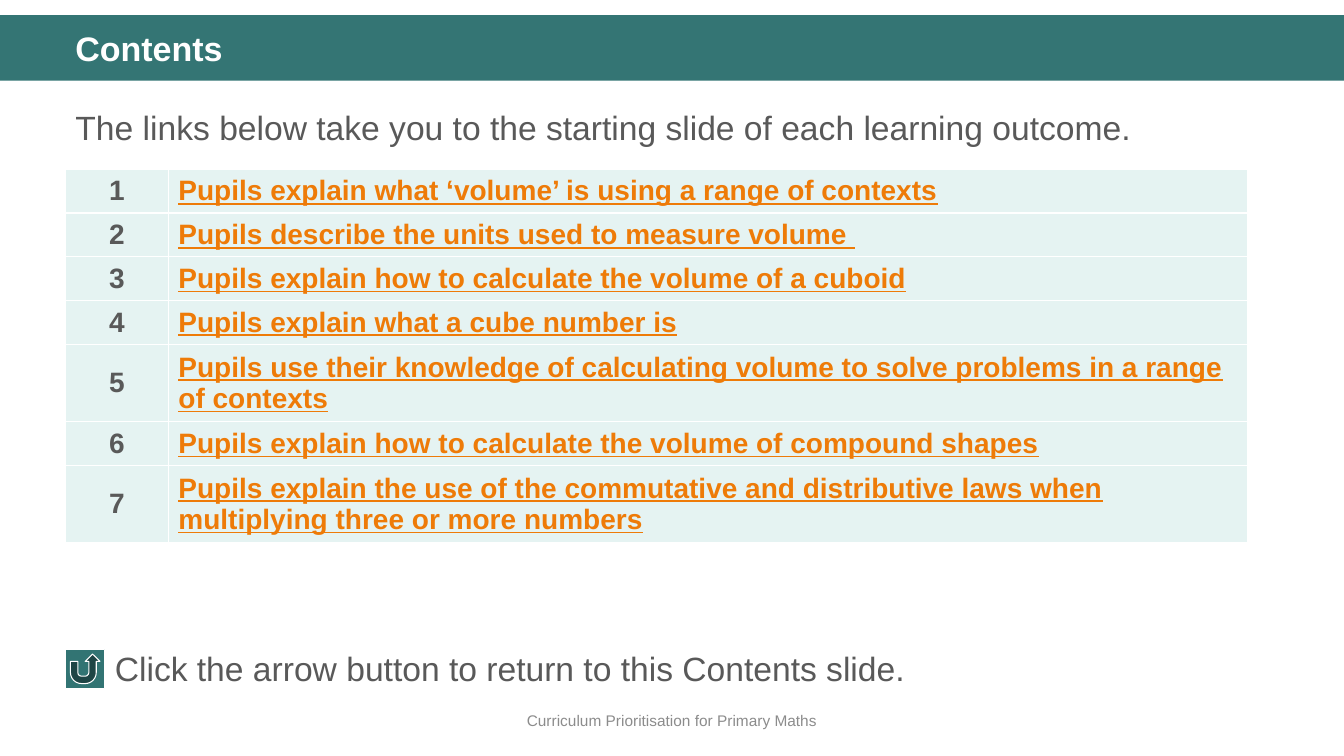
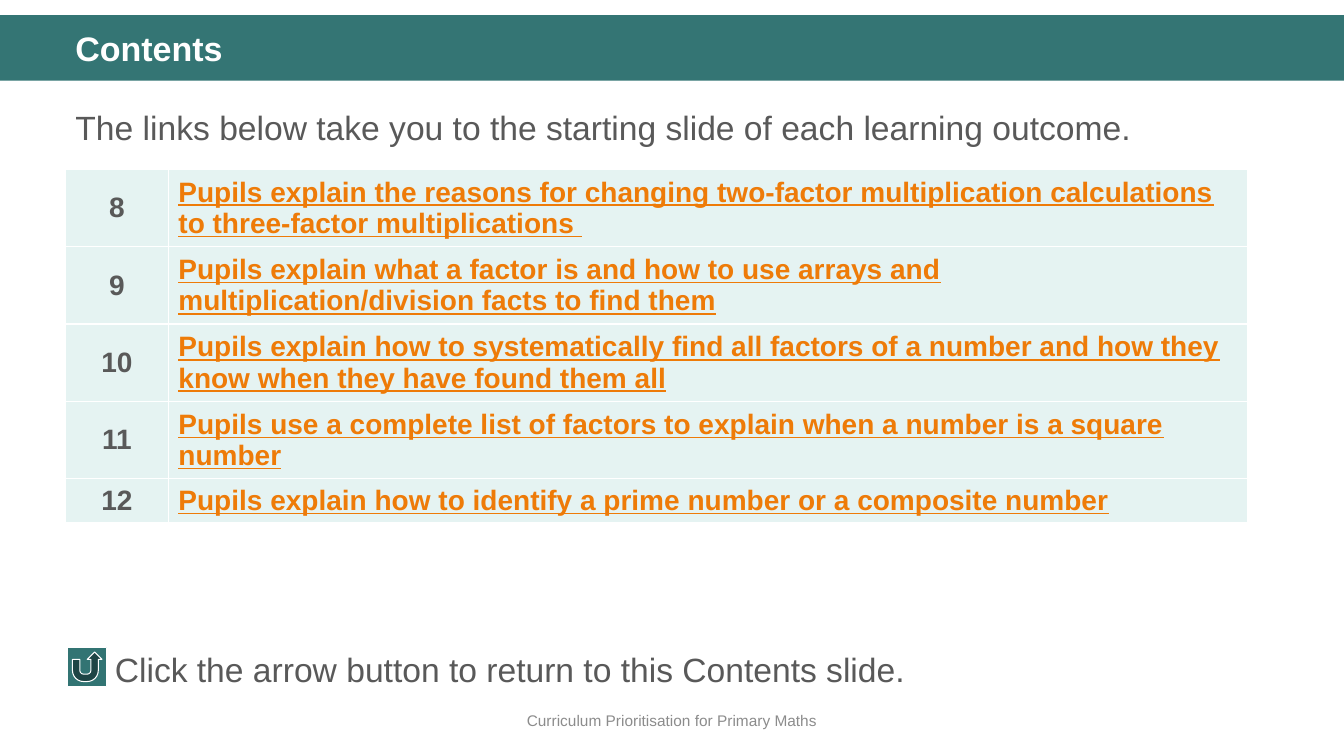
from lxml import etree
from pptx import Presentation
from pptx.dml.color import RGBColor
from pptx.enum.shapes import MSO_SHAPE as Shape
from pptx.enum.text import MSO_ANCHOR as Anchor, PP_ALIGN as Align
from pptx.oxml.ns import qn
from pptx.util import Inches, Pt

COLOURS = {
    "band": "347574",
    "button": "327473",
    "cell": "E5F3F2",
    "link": "EE7B08",
    "text": "595959",
    "footer": "8C8C8C",
    "white": "FFFFFF",
}
FONT = "Arial"
WIDTH, HEIGHT = 13.33, 7.5
MARGIN = 0.65
TEXT_WIDTH = 12.18
COLUMN_WIDTHS = (1.02, 10.7)
ROW_HEIGHT = 0.41
BUTTON_SIZE = 0.39

# Each slide: first number, outcomes, button corner, top of the button caption
CONTENTS = [
    (1, [
        "Pupils explain what ‘volume’ is using a range of contexts",
        "Pupils describe the units used to measure volume ",
        "Pupils explain how to calculate the volume of a cuboid",
        "Pupils explain what a cube number is",
        "Pupils use their knowledge of calculating volume to solve problems in a range of contexts",
        "Pupils explain how to calculate the volume of compound shapes",
        "Pupils explain the use of the commutative and distributive laws when "
        "multiplying three or more numbers",
    ], (0.65, 6.44), 6.38),
    (8, [
        "Pupils explain the reasons for changing two-factor multiplication calculations "
        "to three-factor multiplications ",
        "Pupils explain what a factor is and how to use arrays and "
        "multiplication/division facts to find them",
        "Pupils explain how to systematically find all factors of a number and how they "
        "know when they have found them all",
        "Pupils use a complete list of factors to explain when a number is a square number",
        "Pupils explain how to identify a prime number or a composite number",
    ], (0.67, 6.42), 6.39),
]


def colour(name):
    return RGBColor.from_string(COLOURS[name])


class ContentsDeck:
    """Holds the shared style and the slide being built."""

    def __init__(self):
        self.presentation = Presentation()
        self.presentation.slide_width = Inches(WIDTH)
        self.presentation.slide_height = Inches(HEIGHT)
        self.slide = None

    def start_slide(self, title):
        """Add a slide with the title band and the footer."""
        blank = self.presentation.slide_layouts[6]
        self.slide = self.presentation.slides.add_slide(blank)
        self.shape(Shape.RECTANGLE, 0, 0.15, WIDTH, 0.65, "band")
        self.text(title, MARGIN, 0.27, TEXT_WIDTH, 0.47, 24.3, "white",
                  bold=True, spacing=0.9)
        self.text("Curriculum Prioritisation for Primary Maths", 0, 6.95, WIDTH, 0.4,
                  11, "footer", align=Align.CENTER, anchor=Anchor.MIDDLE)

    def shape(self, kind, left, top, width, height, fill, line=None):
        shape = self.slide.shapes.add_shape(
            kind, Inches(left), Inches(top), Inches(width), Inches(height))
        shape.shadow.inherit = False
        shape.fill.solid()
        shape.fill.fore_color.rgb = colour(fill)
        if line:
            shape.line.color.rgb = colour(line)
            shape.line.width = Pt(0.75)
        else:
            shape.line.fill.background()

    def text(self, words, left, top, width, height, size, ink, bold=False,
             align=Align.LEFT, anchor=Anchor.TOP, spacing=1.0):
        box = self.slide.shapes.add_textbox(
            Inches(left), Inches(top), Inches(width), Inches(height))
        frame = box.text_frame
        frame.word_wrap = True
        frame.vertical_anchor = anchor
        paragraph = frame.paragraphs[0]
        paragraph.line_spacing = spacing
        self.run(paragraph, words, size, ink, bold, align)

    def run(self, paragraph, words, size, ink, bold, align, underline=False):
        paragraph.alignment = align
        run = paragraph.add_run()
        run.text = words
        run.font.name = FONT
        run.font.size = Pt(size)
        run.font.bold = bold
        run.font.underline = underline
        run.font.color.rgb = colour(ink)

    def table(self, first_number, outcomes, left, top):
        frame = self.slide.shapes.add_table(
            len(outcomes), len(COLUMN_WIDTHS), Inches(left), Inches(top),
            Inches(sum(COLUMN_WIDTHS)), Inches(ROW_HEIGHT * len(outcomes)))
        table = frame.table
        table.first_row = table.horz_banding = False
        for column, width in zip(table.columns, COLUMN_WIDTHS):
            column.width = Inches(width)
        for index, outcome in enumerate(outcomes):
            table.rows[index].height = Inches(ROW_HEIGHT)
            self.cell(table.cell(index, 0), str(first_number + index), "text", Align.CENTER)
            self.cell(table.cell(index, 1), outcome, "link", Align.LEFT, underline=True)

    def cell(self, cell, words, ink, align, underline=False):
        cell.vertical_anchor = Anchor.MIDDLE
        self.borders(cell)
        cell.fill.solid()
        cell.fill.fore_color.rgb = colour("cell")
        self.run(cell.text_frame.paragraphs[0], words, 20, ink, True, align, underline)

    def borders(self, cell):
        properties = cell._tc.get_or_add_tcPr()
        for side in ("a:lnL", "a:lnR", "a:lnT", "a:lnB"):
            line = etree.SubElement(properties, qn(side), w=str(Pt(1)))
            fill = etree.SubElement(line, qn("a:solidFill"))
            etree.SubElement(fill, qn("a:srgbClr"), val=COLOURS["white"])

    def save(self):
        self.presentation.save("out.pptx")


def main():
    deck = ContentsDeck()
    for first_number, outcomes, button_corner, caption_top in CONTENTS:
        deck.start_slide("Contents")
        deck.text("The links below take you to the starting slide of each learning outcome.",
                  MARGIN, 0.93, TEXT_WIDTH, 0.6, 24, "text", spacing=1.2)
        deck.table(first_number, outcomes, MARGIN, 1.68)
        deck.shape(Shape.ACTION_BUTTON_RETURN, *button_corner, BUTTON_SIZE, BUTTON_SIZE,
                   "button", line="white")
        deck.text("Click the arrow button to return to this Contents slide.",
                  1.04, caption_top, 11.32, 0.5, 24, "text")
    deck.save()


if __name__ == "__main__":
    main()
